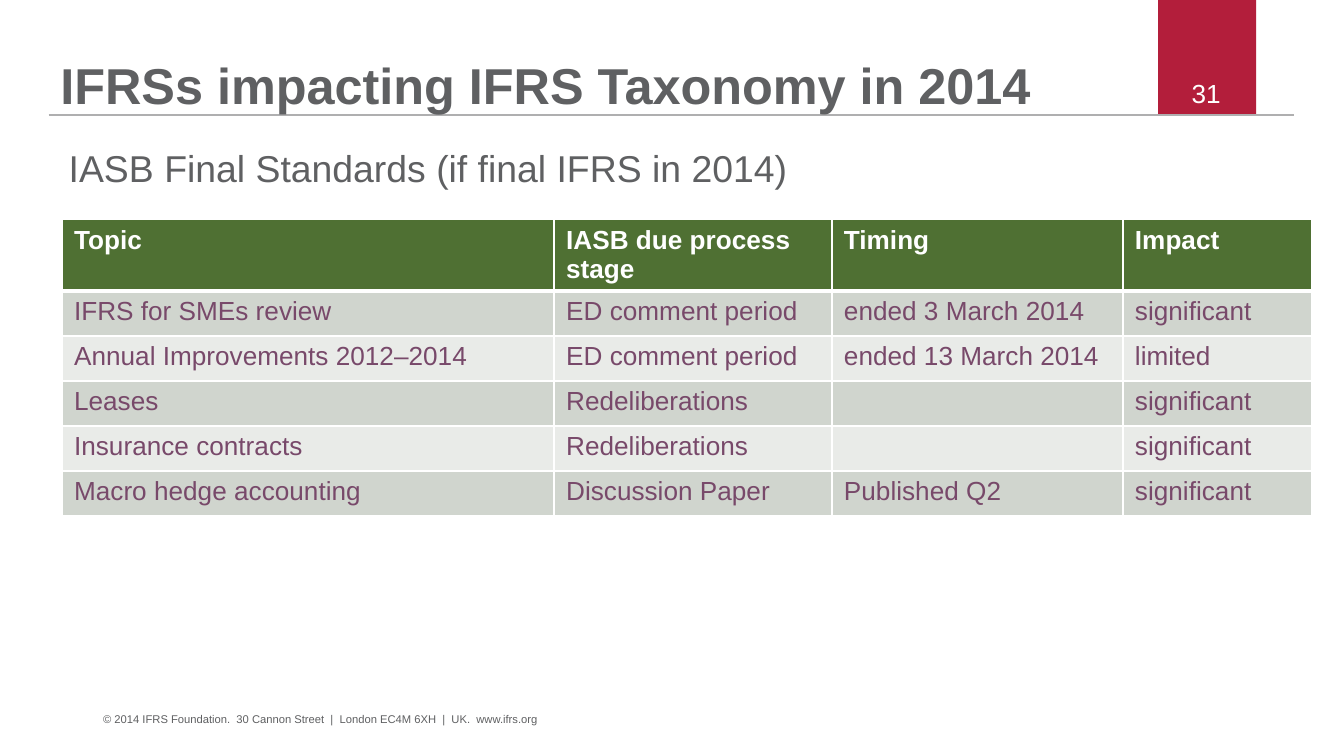
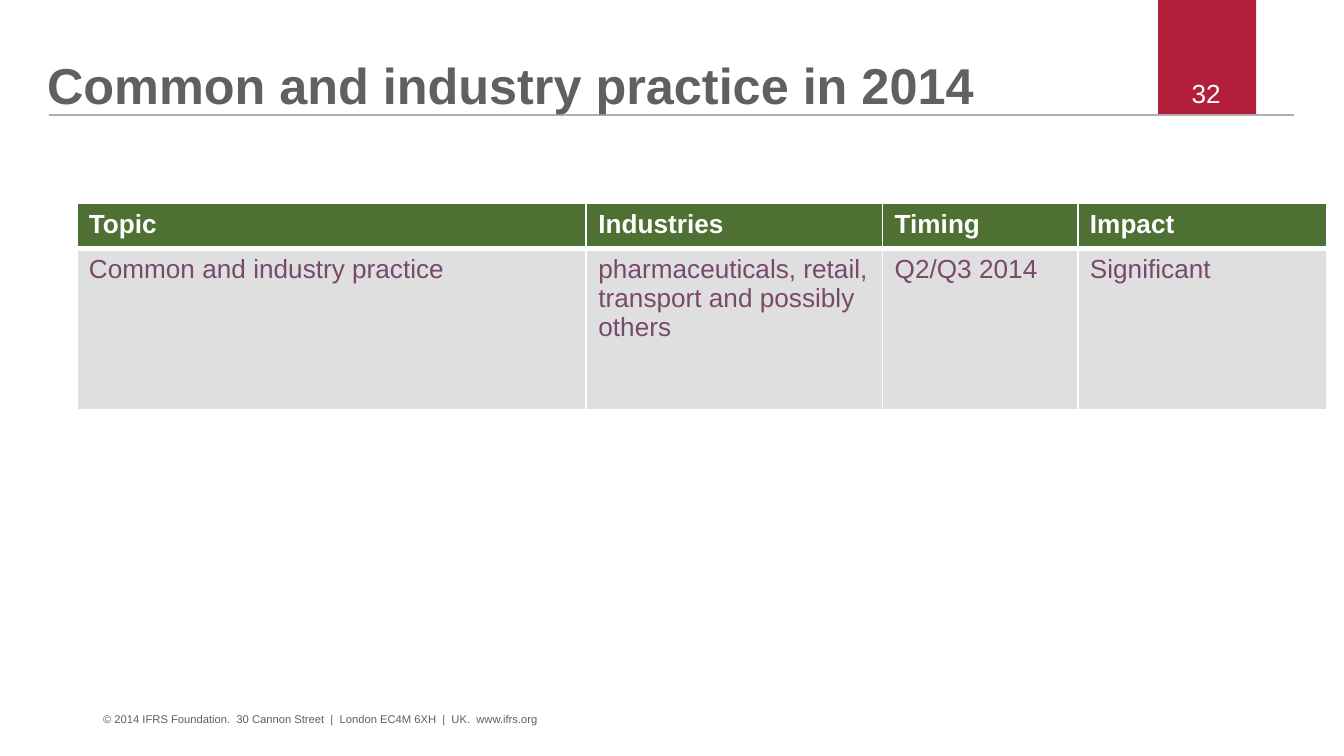
"""Builds two slides on the accounting standards and practice work of 2014."""
from dataclasses import dataclass

from lxml.etree import SubElement
from pptx import Presentation
from pptx.dml.color import RGBColor
from pptx.enum.shapes import MSO_CONNECTOR, MSO_SHAPE
from pptx.enum.text import MSO_ANCHOR, MSO_AUTO_SIZE, PP_ALIGN
from pptx.oxml import parse_xml
from pptx.oxml.ns import nsdecls, qn
from pptx.util import Cm, Pt

FONT = "Arial"
GREY, RED, RULE, WHITE = "5F6062", "B31E3B", "AFAFB0", "FFFFFF"
GREEN, PURPLE = "4F7033", "78496A"
SAGE, PALE, SILVER = "D0D5CE", "E9EBE8", "DFDFE0"
INSET_X, INSET_Y = 0.23, 0.11
FOOTER = "© 2014 IFRS Foundation.  30 Cannon Street  |  London EC4M 6XH  |  UK.  www.ifrs.org"


@dataclass(frozen=True)
class Box:
    left: float
    top: float
    width: float
    height: float


@dataclass(frozen=True)
class TextSpec:
    text: str
    box: Box
    size: float
    color: str = GREY
    bold: bool = False
    align: PP_ALIGN = PP_ALIGN.LEFT
    inset: tuple[float, float] = (0, 0)


@dataclass(frozen=True)
class TableSpec:
    left: float
    top: float
    cols: tuple[float, ...]
    heights: tuple[float, ...]
    bands: tuple[str, ...]
    rows: tuple[tuple[str, ...], ...]


@dataclass(frozen=True)
class SlideSpec:
    number: int
    title: str
    title_left: float
    table: TableSpec
    subtitle: str = ""


SLIDES = (
    SlideSpec(
        31, "IFRSs impacting IFRS Taxonomy in 2014", 1.14,
        TableSpec(
            1.17, 4.15, (9.3, 5.25, 5.5, 3.57), (1.35,) + (0.85,) * 5, (SAGE, PALE),
            (
                ("Topic", "IASB due process stage", "Timing", "Impact"),
                ("IFRS for SMEs review", "ED comment period", "ended 3 March 2014", "significant"),
                ("Annual Improvements 2012–2014", "ED comment period", "ended 13 March 2014", "limited"),
                ("Leases", "Redeliberations", "", "significant"),
                ("Insurance contracts", "Redeliberations", "", "significant"),
                ("Macro hedge accounting", "Discussion Paper", "Published Q2", "significant"),
            ),
        ),
        "IASB Final Standards (if final IFRS in 2014)",
    ),
    SlideSpec(
        32, "Common and industry practice in 2014", 0.89,
        TableSpec(
            1.45, 3.85, (9.63, 5.6, 3.69, 4.7), (0.85, 3.04), (SILVER,),
            (
                ("Topic", "Industries", "Timing", "Impact"),
                ("Common and industry practice", "pharmaceuticals, retail, transport and possibly others",
                 "Q2/Q3 2014", "Significant"),
            ),
        ),
    ),
)


def rgb(color: str) -> RGBColor:
    """Turn a hex string into a colour."""
    return RGBColor.from_string(color)


def format_runs(p, size: float, color: str, bold: bool = False) -> None:
    """Give every run of a paragraph the same font."""
    for r in p.runs:
        r.font.name = FONT
        r.font.size = Pt(size)
        r.font.bold = bold
        r.font.color.rgb = rgb(color)


def fill_text(sp, spec: TextSpec) -> None:
    """Place a text shape and write its single paragraph."""
    box = spec.box
    sp.left, sp.top, sp.width, sp.height = Cm(box.left), Cm(box.top), Cm(box.width), Cm(box.height)
    tf = sp.text_frame
    tf.word_wrap = True
    tf.auto_size = MSO_AUTO_SIZE.NONE
    tf.margin_left = tf.margin_right = Cm(spec.inset[0])
    tf.margin_top = tf.margin_bottom = Cm(spec.inset[1])
    tf.text = spec.text
    p = tf.paragraphs[0]
    p.alignment = spec.align
    format_runs(p, spec.size, spec.color, spec.bold)


def add_text(s, spec: TextSpec) -> None:
    """Add a text box."""
    fill_text(s.shapes.add_textbox(0, 0, 0, 0), spec)


def add_header(s, spec: SlideSpec) -> None:
    """Draw the red tab and the rule, with the title in front of them."""
    tab = s.shapes.add_shape(MSO_SHAPE.RECTANGLE, Cm(21.89), 0, Cm(1.85), Cm(2.17))
    tab.shadow.inherit = False
    tab.fill.solid()
    tab.fill.fore_color.rgb = rgb(RED)
    tab.line.fill.background()
    rule = s.shapes.add_connector(MSO_CONNECTOR.STRAIGHT, Cm(0.92), Cm(2.18), Cm(24.46), Cm(2.18))
    rule.line.color.rgb = rgb(RULE)
    rule.line.width = Pt(1.2)
    SubElement(rule._element.spPr, qn("a:effectLst"))
    title = s.shapes.title
    fill_text(title, TextSpec(spec.title, Box(spec.title_left, 0.53, 21.4, 1.65), 27, bold=True))
    title.text_frame.vertical_anchor = MSO_ANCHOR.BOTTOM
    title.text_frame.paragraphs[0].line_spacing = 0.9
    s.shapes._spTree.append(title._element)


def set_borders(cell, row: int) -> None:
    """Give a cell white borders, thick between the header and the body."""
    widths = {"L": 1, "R": 1, "T": 3 if row == 1 else 1, "B": 3 if row == 0 else 1}
    tc_pr = cell._tc.get_or_add_tcPr()
    for i, (side, width) in enumerate(widths.items()):
        tc_pr.insert(i, parse_xml(
            f'<a:ln{side} {nsdecls("a")} w="{Pt(width)}"><a:solidFill>'
            f'<a:srgbClr val="{WHITE}"/></a:solidFill></a:ln{side}>'))


def format_cell(cell, text: str, row: int, fill: str) -> None:
    """Write and style one table cell."""
    cell.margin_left = cell.margin_right = Cm(INSET_X)
    cell.margin_top = cell.margin_bottom = Cm(INSET_Y)
    cell.fill.solid()
    cell.fill.fore_color.rgb = rgb(fill)
    set_borders(cell, row)
    p = cell.text_frame.paragraphs[0]
    p.text = text
    format_runs(p, 14, PURPLE if row else WHITE, row == 0)
    if not text:
        SubElement(p._p, qn("a:endParaRPr"), sz="1400")


def add_table(s, spec: TableSpec) -> None:
    """Add a table with a green header and banded body rows."""
    frame = s.shapes.add_table(
        len(spec.rows), len(spec.cols), Cm(spec.left), Cm(spec.top),
        Cm(sum(spec.cols)), Cm(sum(spec.heights)))
    table = frame.table
    table.horz_banding = False
    for col, width in zip(table.columns, spec.cols):
        col.width = Cm(width)
    for i, (texts, height) in enumerate(zip(spec.rows, spec.heights)):
        table.rows[i].height = Cm(height)
        fill = spec.bands[(i - 1) % len(spec.bands)] if i else GREEN
        for j, text in enumerate(texts):
            format_cell(table.cell(i, j), text, i, fill)


def add_slide(prs, spec: SlideSpec) -> None:
    """Build one slide."""
    s = prs.slides.add_slide(prs.slide_layouts[5])
    add_header(s, spec)
    add_table(s, spec.table)
    add_text(s, TextSpec(FOOTER, Box(1.95, 13.46, 15.7, 0.4), 6))
    add_text(s, TextSpec(str(spec.number), Box(21.92, 1.47, 1.75, 0.4), 14, WHITE, align=PP_ALIGN.CENTER))
    if spec.subtitle:
        add_text(s, TextSpec(spec.subtitle, Box(1.07, 2.64, 23.62, 1.07), 20, inset=(INSET_X, INSET_Y)))


def main() -> None:
    """Build and save the presentation."""
    prs = Presentation()
    prs.slide_width, prs.slide_height = Cm(25.4), Cm(14.29)
    for spec in SLIDES:
        add_slide(prs, spec)
    prs.save("out.pptx")


if __name__ == "__main__":
    main()
